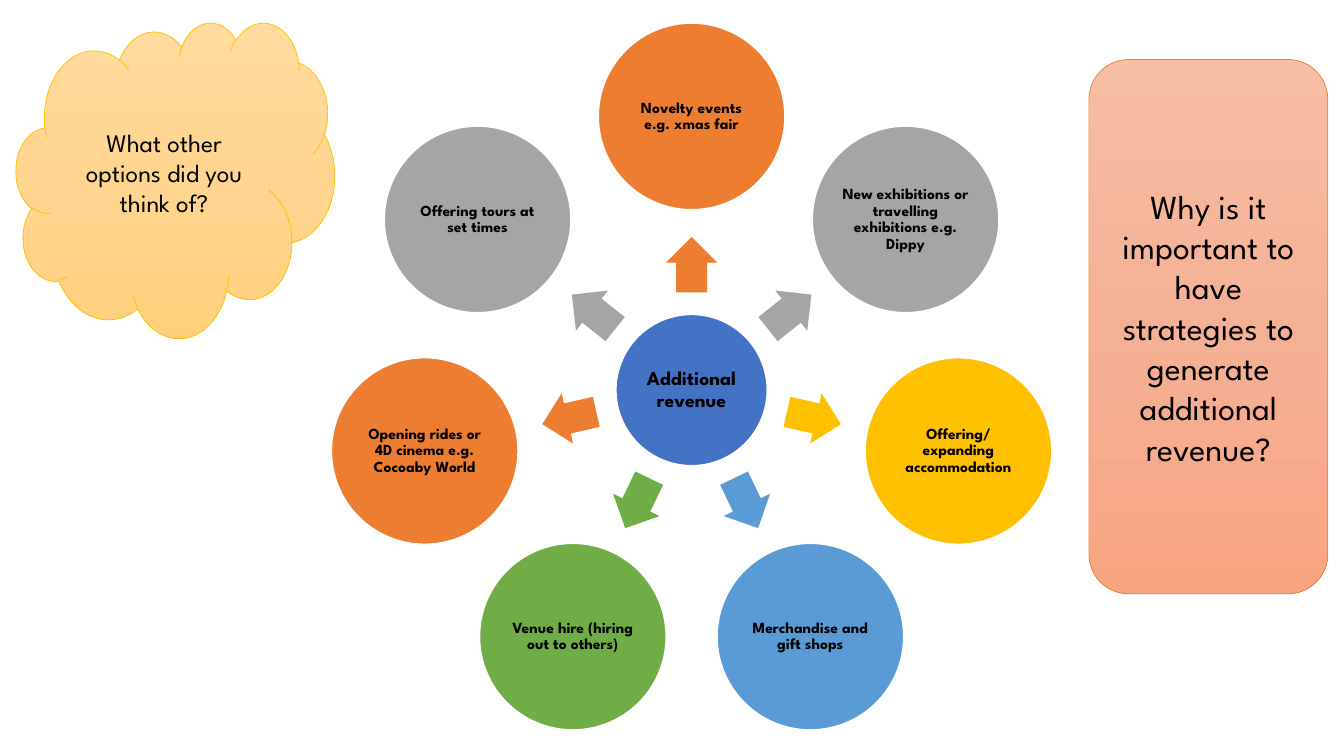
from copy import deepcopy
from dataclasses import dataclass
from math import cos, radians, sin

from pptx import Presentation
from pptx.dml.color import RGBColor
from pptx.enum.shapes import MSO_SHAPE
from pptx.enum.text import MSO_ANCHOR, PP_ALIGN
from pptx.oxml.ns import qn
from pptx.util import Inches, Pt

ELLIPSE, ARROW = MSO_SHAPE.OVAL, MSO_SHAPE.RIGHT_ARROW
CLOUD, ROUNDED = MSO_SHAPE.CLOUD, MSO_SHAPE.ROUNDED_RECTANGLE
CENTER, MIDDLE = PP_ALIGN.CENTER, MSO_ANCHOR.MIDDLE

WIDTH, HEIGHT = Inches(13.33), Inches(7.5)
FONT = "League Spartan"
BLACK, WHITE = "000000", "FFFFFF"
BLUE, ORANGE, GREY = "4472C4", "ED7D31", "A5A5A5"
GOLD, SKY, GREEN = "FFC000", "5B9BD5", "70AD47"

# Percentages of the slide width (x) or height (y, sizes and radii)
HUB_X, HUB_Y, HUB_SIZE = 51.46, 51.6, 20
IDEA_SIZE, IDEA_RADIUS = 24.67, 36.2
ARROW_LENGTH, ARROW_THICKNESS, ARROW_RADIUS = 7.33, 6.8, 16.6


@dataclass
class Idea:
    """One revenue idea around the hub."""
    text: str
    color: str


@dataclass
class Question:
    """A gradient-filled question, placed in percent of the slide."""
    text: str
    kind: MSO_SHAPE
    left: float
    top: float
    width: float
    height: float
    gradient: tuple[str, str, str]
    line: str
    size: int


IDEAS = [
    Idea("Novelty events e.g. xmas fair", ORANGE),
    Idea("New exhibitions or travelling exhibitions e.g. Dippy", GREY),
    Idea("Offering/ expanding accommodation", GOLD),
    Idea("Merchandise and gift shops", SKY),
    Idea("Venue hire (hiring out to others)", GREEN),
    Idea("Opening rides or 4D cinema e.g. Cocoaby World", ORANGE),
    Idea("Offering tours at set times", GREY),
]
QUESTIONS = [
    Question("What other options did you think of?", CLOUD, 1.2, 2.93, 23.71, 41.73,
             ("FFDB9E", "FFD590", "FFD07C"), GOLD, 18),
    Question("Why is it important to have strategies to generate additional revenue?",
             ROUNDED, 81.02, 7.87, 17.78, 70.67,
             ("F7BDA5", "F5B196", "F8A582"), ORANGE, 24),
]


def rgb(color: str) -> RGBColor:
    """Turn a hex string into a colour."""
    return RGBColor.from_string(color)


def across(percent: float) -> int:
    """Give a share of the slide width."""
    return round(WIDTH * percent / 100)


def down(percent: float) -> int:
    """Give a share of the slide height."""
    return round(HEIGHT * percent / 100)


def write_text(shape, text: str, *, size: int, bold: bool = False,
               spacing: float = 1.0, inset: float | None = None) -> None:
    """Write centred black text in a shape."""
    frame = shape.text_frame
    frame.word_wrap = True
    frame.vertical_anchor = MIDDLE
    if inset is not None:
        frame.margin_left = frame.margin_right = Inches(inset)
        frame.margin_top = frame.margin_bottom = Inches(inset)
    paragraph = frame.paragraphs[0]
    paragraph.alignment = CENTER
    paragraph.line_spacing = spacing
    run = paragraph.add_run()
    run.text = text
    run.font.name = FONT
    run.font.size = Pt(size)
    run.font.bold = bold
    run.font.color.rgb = rgb(BLACK)


def add_centered(slide, kind: MSO_SHAPE, angle: float, radius: float,
                 width: float, height: float, color: str):
    """Add a filled shape centred at an angle and radius from the hub."""
    center_x = across(HUB_X) + down(radius) * cos(radians(angle))
    center_y = down(HUB_Y) + down(radius) * sin(radians(angle))
    shape = slide.shapes.add_shape(
        kind, round(center_x - down(width) / 2), round(center_y - down(height) / 2),
        down(width), down(height))
    shape.shadow.inherit = False
    shape.fill.solid()
    shape.fill.fore_color.rgb = rgb(color)
    shape.line.fill.background()
    return shape


def add_circle(slide, text: str, angle: float, radius: float, diameter: float,
               color: str, size: int) -> None:
    """Add a labelled circle with a white outline."""
    circle = add_centered(slide, ELLIPSE, angle, radius, diameter, diameter, color)
    circle.line.color.rgb = rgb(WHITE)
    circle.line.width = Pt(1)
    write_text(circle, text, size=size, bold=True, spacing=0.9, inset=0.02)


def add_arrow(slide, angle: float, color: str) -> None:
    """Add an arrow pointing away from the hub."""
    arrow = add_centered(slide, ARROW, angle, ARROW_RADIUS, ARROW_LENGTH,
                         ARROW_THICKNESS, color)
    arrow.adjustments[0] = 0.6
    arrow.adjustments[1] = 0.5
    arrow.rotation = angle % 360


def fill_gradient(shape, colors: tuple[str, str, str]) -> None:
    """Fill a shape with three evenly spaced colours from top to bottom."""
    shape.fill.gradient()
    shape.fill.gradient_angle = 270
    stop_list = next(shape.element.iter(qn("a:gsLst")))
    stop_list.insert(1, deepcopy(stop_list[0]))
    for index, (stop, color) in enumerate(zip(shape.fill.gradient_stops, colors)):
        stop.position = index / 2
        stop.color.rgb = rgb(color)


def add_question(slide, question: Question) -> None:
    """Add one question shape."""
    shape = slide.shapes.add_shape(
        question.kind, across(question.left), down(question.top),
        across(question.width), down(question.height))
    shape.shadow.inherit = False
    fill_gradient(shape, question.gradient)
    shape.line.color.rgb = rgb(question.line)
    shape.line.width = Pt(0.5)
    write_text(shape, question.text, size=question.size)


def main() -> None:
    """Build and save the slide."""
    presentation = Presentation()
    presentation.slide_width, presentation.slide_height = WIDTH, HEIGHT
    slide = presentation.slides.add_slide(presentation.slide_layouts[6])
    add_circle(slide, "Additional revenue", 0, 0, HUB_SIZE, BLUE, 14)
    for index, idea in enumerate(IDEAS):
        angle = index * 360 / len(IDEAS) - 90
        add_arrow(slide, angle, idea.color)
        add_circle(slide, idea.text, angle, IDEA_RADIUS, IDEA_SIZE, idea.color, 11)
    for question in QUESTIONS:
        add_question(slide, question)
    presentation.save("out.pptx")


if __name__ == "__main__":
    main()
